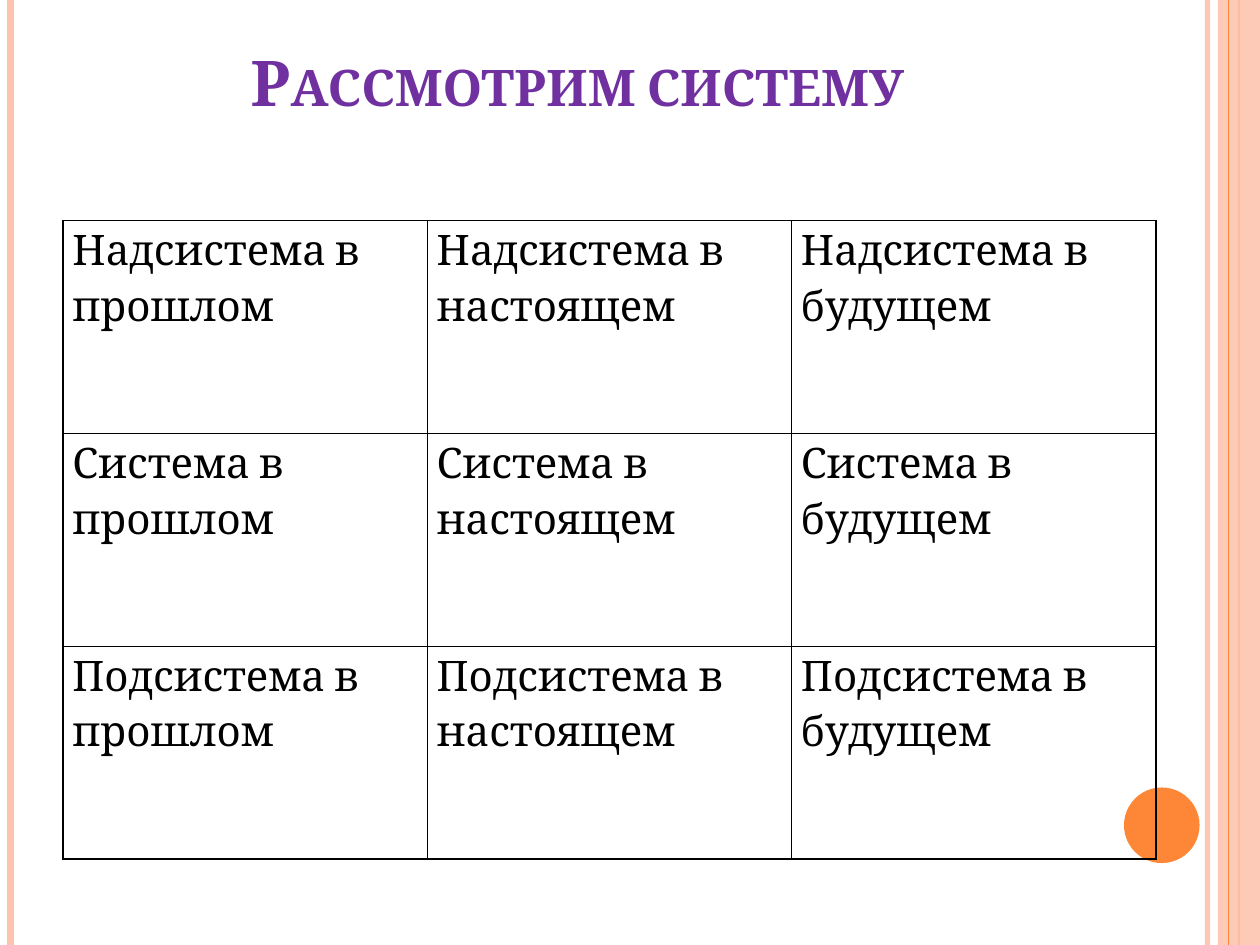
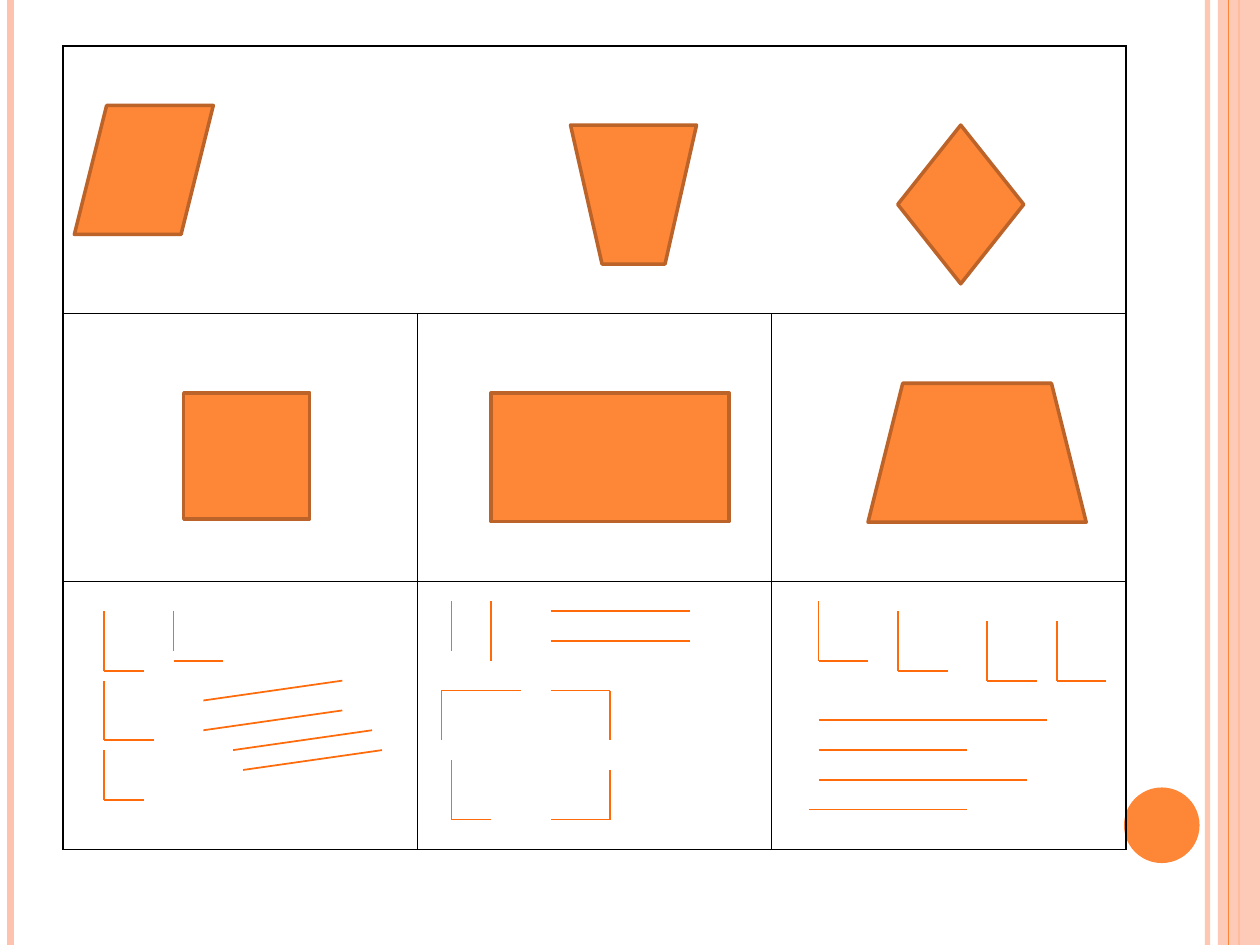
import pptx
import pptx.dml.color
import pptx.enum.shapes
import pptx.enum.text
import pptx.oxml
import pptx.oxml.ns
import pptx.util
from lxml import etree

Pt = pptx.util.Pt
qn = pptx.oxml.ns.qn
SHAPE = pptx.enum.shapes.MSO_SHAPE

SLIDE_W, SLIDE_H = 720, 540
FONT = "Cambria"
COLORS = {
    "band": "FEC3AE",
    "accent": "FE8637",
    "outline": "BC6329",
    "stroke": "FF6B0A",
    "title": "7030A0",
    "text": "000000",
}

SYSTEM_LEVELS = ["Надсистема", "Система", "Подсистема"]
TIMES = ["прошлом", "настоящем", "будущем"]

# preset, left, top, width, height, rotation
FIGURES = [
    (SHAPE.RECTANGLE, 105, 224.5, 72, 72, 0),
    (SHAPE.RECTANGLE, 280.6, 224.5, 136, 73.5, 0),
    (SHAPE.TRAPEZOID, 496, 219, 124.7, 79.4, 0),
    (SHAPE.PARALLELOGRAM, 42.5, 60.3, 79.4, 73.7, 0),
    (SHAPE.TRAPEZOID, 326, 71.5, 72, 79.4, 180),
    (SHAPE.DIAMOND, 513, 71.5, 72, 90.7, 0),
]

# Stroke points are (column, row) on a drawing grid of 2 mm
GRID_STEP, GRID_X, GRID_Y = 5.67, 2.83, 3.4
SQUARE_PARTS = [
    [(10, 61), (10, 67), (14, 67)],
    [(10, 68), (10, 74), (15, 74)],
    [(10, 75), (10, 80), (14, 80)],
    [(17, 61), (17, 65)],
    [(17, 66), (22, 66)],
    [(20, 70), (34, 68)],
    [(20, 73), (34, 71)],
    [(23, 75), (37, 73)],
    [(24, 77), (38, 75)],
]
RECTANGLE_PARTS = [
    [(45, 60), (45, 65)],
    [(49, 60), (49, 66)],
    [(55, 61), (69, 61)],
    [(55, 64), (69, 64)],
    [(52, 69), (44, 69), (44, 74)],
    [(55, 69), (61, 69), (61, 74)],
    [(45, 76), (45, 82), (49, 82)],
    [(61, 77), (61, 82), (55, 82)],
]
TRAPEZOID_PARTS = [
    [(82, 60), (82, 66), (87, 66)],
    [(90, 61), (90, 67), (95, 67)],
    [(99, 62), (99, 68), (104, 68)],
    [(106, 62), (106, 68), (111, 68)],
    [(82, 72), (105, 72)],
    [(82, 75), (97, 75)],
    [(82, 78), (103, 78)],
    [(81, 81), (97, 81)],
]


def rgb(name):
    return pptx.dml.color.RGBColor.from_string(COLORS[name])


def set_alpha(element, percent):
    """Make the first colour inside element partly transparent."""
    color = next(element.iter(qn("a:srgbClr")))
    etree.SubElement(color, qn("a:alpha"), val=str(percent * 1000))


def add_line(s, start, end, color, width, alpha=None):
    line = s.shapes.add_connector(
        pptx.enum.shapes.MSO_CONNECTOR.STRAIGHT,
        Pt(start[0]), Pt(start[1]), Pt(end[0]), Pt(end[1]))
    line.line.color.rgb = rgb(color)
    line.line.width = Pt(width)
    sp_pr = line._element.spPr
    if alpha:
        set_alpha(sp_pr, alpha)
    etree.SubElement(sp_pr, qn("a:effectLst"))


def add_figure(s, preset, left, top, width, height, rotation=0,
               outline=None, alpha=None):
    sp = s.shapes.add_shape(preset, Pt(left), Pt(top), Pt(width), Pt(height))
    sp.shadow.inherit = False
    sp.rotation = rotation
    sp.fill.solid()
    sp.fill.fore_color.rgb = rgb("band" if alpha else "accent")
    if alpha:
        set_alpha(sp._element.spPr, alpha)
    if outline:
        sp.line.color.rgb = rgb(outline)
        sp.line.width = Pt(2)
    else:
        sp.line.fill.background()


def add_base_slide(prs):
    """Add a blank slide with the side bands and the corner circle."""
    s = prs.slides.add_slide(prs.slide_layouts[6])

    def add_stripe(x, color, width, alpha=None):
        add_line(s, (x, 0), (x, SLIDE_H), color, width, alpha)

    add_stripe(690, "band", 3, 93)
    add_stripe(6, "band", 4.5)
    add_stripe(708, "accent", 1.5)
    add_figure(s, SHAPE.RECTANGLE, 696, 0, 24, SLIDE_H, alpha=87)
    add_stripe(702, "accent", 0.75)
    add_figure(s, SHAPE.OVAL, 642.3, 450, 43.2, 43.2)
    return s


def add_run(p, text, size, color):
    r = p.add_run()
    r.text = text
    r.font.name = FONT
    r.font.size = Pt(size)
    r.font.color.rgb = rgb(color)
    return r


def add_title(s, text):
    tf = s.shapes.add_textbox(Pt(36), Pt(21.6), Pt(588), Pt(90)).text_frame
    tf.word_wrap = True
    tf.vertical_anchor = pptx.enum.text.MSO_ANCHOR.BOTTOM
    tf.margin_top, tf.margin_bottom = 0, Pt(44)
    p = tf.paragraphs[0]
    p.alignment = pptx.enum.text.PP_ALIGN.CENTER
    r = add_run(p, text, 36, "title")
    r.font.bold = True
    r.font._element.set("cap", "small")


def style_cell(cell):
    """Clear the fill and rule all four sides."""
    cell.fill.background()
    tc_pr = cell._tc.get_or_add_tcPr()
    for i, side in enumerate(("lnL", "lnR", "lnT", "lnB")):
        ln = etree.Element(qn("a:" + side), w=str(Pt(1)))
        fill = etree.SubElement(ln, qn("a:solidFill"))
        etree.SubElement(fill, qn("a:srgbClr"), val=COLORS["text"])
        tc_pr.insert(i, ln)


def add_grid(s, left, top, width, height):
    """Add a ruled table of three equal rows and columns."""
    table = s.shapes.add_table(
        3, 3, Pt(left), Pt(top), Pt(width), Pt(height)).table
    table.first_row = table.horz_banding = False
    for cell in table.iter_cells():
        style_cell(cell)
    return table


def fill_cell(cell, text):
    cell.margin_left = cell.margin_right = Pt(5.4)
    cell.margin_top = cell.margin_bottom = 0
    p = cell.text_frame.paragraphs[0]
    p.line_spacing = 1.15
    add_run(p, text, 24, "text")


def add_strokes(s, points):
    """Join successive grid points with straight lines."""
    places = [(GRID_X + col * GRID_STEP, GRID_Y + row * GRID_STEP)
              for col, row in points]
    for start, end in zip(places, places[1:]):
        add_line(s, start, end, "stroke", 1)


def build_system_slide(prs):
    s = add_base_slide(prs)
    add_title(s, "Рассмотрим систему")
    table = add_grid(s, 36, 126, 624.5, 365)
    for row, level in enumerate(SYSTEM_LEVELS):
        for col, time in enumerate(TIMES):
            fill_cell(table.cell(row, col), f"{level} в {time}")


def build_figures_slide(prs):
    s = add_base_slide(prs)
    table = add_grid(s, 36, 26.2, 607.5, 459.2)
    table.cell(0, 0).merge(table.cell(0, 2))
    for figure in FIGURES:
        add_figure(s, *figure, outline="outline")
    for points in SQUARE_PARTS + RECTANGLE_PARTS + TRAPEZOID_PARTS:
        add_strokes(s, points)


def main():
    prs = pptx.Presentation()
    prs.slide_width, prs.slide_height = Pt(SLIDE_W), Pt(SLIDE_H)
    build_system_slide(prs)
    build_figures_slide(prs)
    prs.save("out.pptx")


if __name__ == "__main__":
    main()
